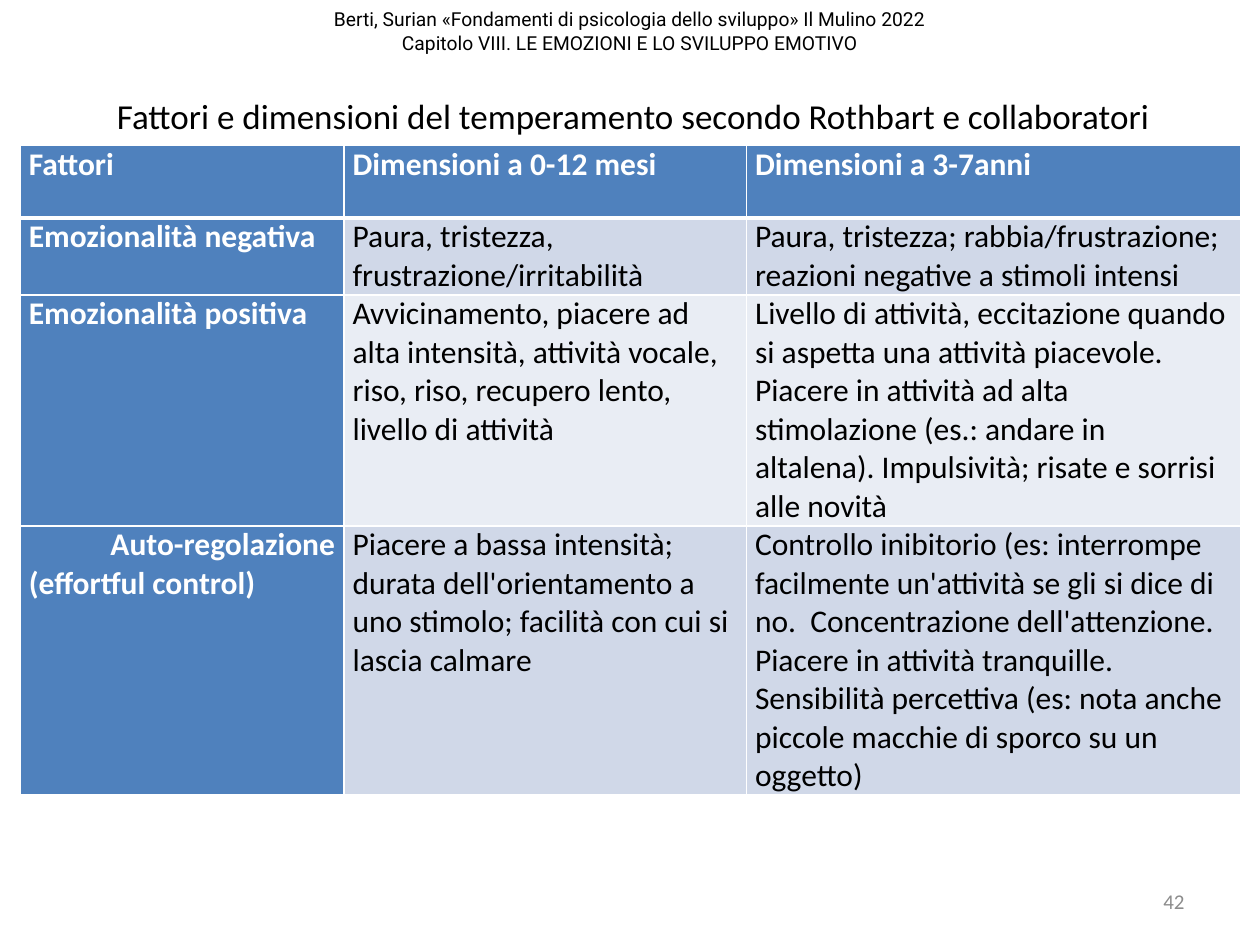
from lxml import etree
from pptx import Presentation
from pptx.dml.color import RGBColor
from pptx.enum import text as t
from pptx.oxml.ns import qn
from pptx.util import Pt

# Content
HEADER = ("Berti, Surian «Fondamenti di psicologia dello sviluppo» Il Mulino 2022\v"
          "Capitolo VIII. LE EMOZIONI E LO SVILUPPO EMOTIVO")
TITLE = "Fattori e dimensioni del temperamento secondo Rothbart e collaboratori"
PAGE_NUMBER = "42"
ROWS = [
    ("Fattori", "Dimensioni a 0-12 mesi", "Dimensioni a 3-7anni"),
    ("Emozionalità negativa",
     "Paura, tristezza, frustrazione/irritabilità",
     "Paura, tristezza; rabbia/frustrazione; reazioni negative a stimoli intensi"),
    ("Emozionalità positiva",
     "Avvicinamento, piacere ad alta intensità, attività vocale, riso, riso, "
     "recupero lento, livello di attività",
     "Livello di attività, eccitazione quando si aspetta una attività piacevole. "
     "Piacere in attività ad alta stimolazione (es.: andare in altalena). "
     "Impulsività; risate e sorrisi alle novità"),
    (" Auto-regolazione (effortful control)",
     "Piacere a bassa intensità; durata dell'orientamento a uno stimolo; "
     "facilità con cui si lascia calmare",
     "Controllo inibitorio (es: interrompe facilmente un'attività se gli si dice "
     "di no.  Concentrazione dell'attenzione. Piacere in attività tranquille. "
     "Sensibilità percettiva (es: nota anche piccole macchie di sporco su un oggetto)"),
]
COLUMN_WIDTHS = [185, 230, 282.5]
ROW_HEIGHTS = [41.5, 44, 132, 153.5]
BLUE, BANDS = "4F81BD", ("E9EDF4", "D0D8E8")
WHITE, BLACK, GREY = "FFFFFF", "000000", "8C8C8C"
ALIGN = t.PP_ALIGN


def color(value):
    return RGBColor.from_string(value)


def style(para, size, ink, align, font="Calibri", bold=False):
    para.alignment = align
    for span in para.runs:
        span.font.size, span.font.name, span.font.bold = Pt(size), font, bold
        span.font.color.rgb = color(ink)


def add_text(page, words, place, size, ink, align, anchor, font="Calibri"):
    box = page.shapes.add_textbox(*(Pt(length) for length in place))
    frame = box.text_frame
    frame.word_wrap = True
    frame.vertical_anchor = anchor
    frame.text = words
    style(frame.paragraphs[0], size, ink, align, font)


def add_borders(cell, widths):
    props = cell._tc.get_or_add_tcPr()
    for index, (side, width) in enumerate(widths.items()):
        line = etree.Element(qn("a:ln" + side), w=str(Pt(width)))
        fill = etree.SubElement(line, qn("a:solidFill"))
        etree.SubElement(fill, qn("a:srgbClr"), val=WHITE)
        props.insert(index, line)


def add_table(page):
    table = page.shapes.add_table(
        len(ROWS), len(COLUMN_WIDTHS), Pt(11.5), Pt(83),
        Pt(sum(COLUMN_WIDTHS)), Pt(sum(ROW_HEIGHTS))).table
    for column, width in zip(table.columns, COLUMN_WIDTHS):
        column.width = Pt(width)
    for row, height in zip(table.rows, ROW_HEIGHTS):
        row.height = Pt(height)

    for r, row in enumerate(ROWS):
        for c, words in enumerate(row):
            cell = table.cell(r, c)
            heading = r == 0 or c == 0
            cell.margin_left = cell.margin_right = Pt(5)
            cell.margin_top = cell.margin_bottom = 0
            cell.fill.solid()
            cell.fill.fore_color.rgb = color(BLUE if heading else BANDS[r % 2])
            cell.text = words
            justified = c == 0 or (r == 0 and c == 2)
            style(cell.text_frame.paragraphs[0], 18, WHITE if heading else BLACK,
                  ALIGN.JUSTIFY if justified else ALIGN.LEFT, bold=heading)
            add_borders(cell, {"L": 1, "R": 1, "T": 3 if r == 1 else 1,
                               "B": 3 if r == 0 else 1})


def main():
    deck = Presentation()
    deck.slide_width, deck.slide_height = Pt(720), Pt(540)
    page = deck.slides.add_slide(deck.slide_layouts[6])

    # Running header and page number
    middle = t.MSO_ANCHOR.MIDDLE
    add_text(page, HEADER, (0, -13.7, 720, 62.6), 11, BLACK, ALIGN.CENTER, middle, "Roboto")
    add_text(page, PAGE_NUMBER, (516, 500.5, 168, 28.8), 12, GREY, ALIGN.RIGHT, middle)

    # Table under its title
    add_table(page)
    add_text(page, TITLE, (14.4, 50.4, 695, 53), 20, BLACK, ALIGN.CENTER, t.MSO_ANCHOR.TOP)
    deck.save("out.pptx")


if __name__ == "__main__":
    main()
